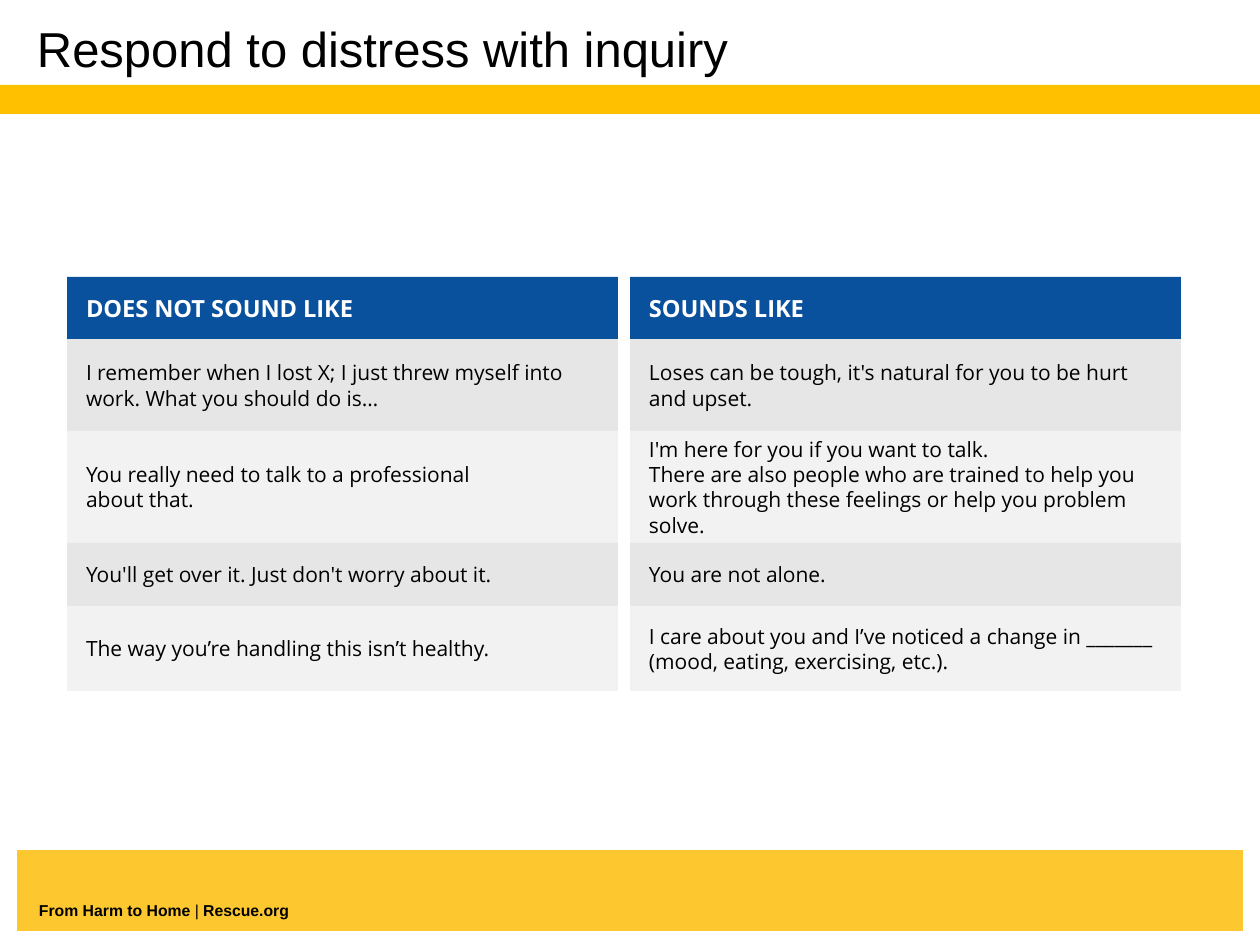
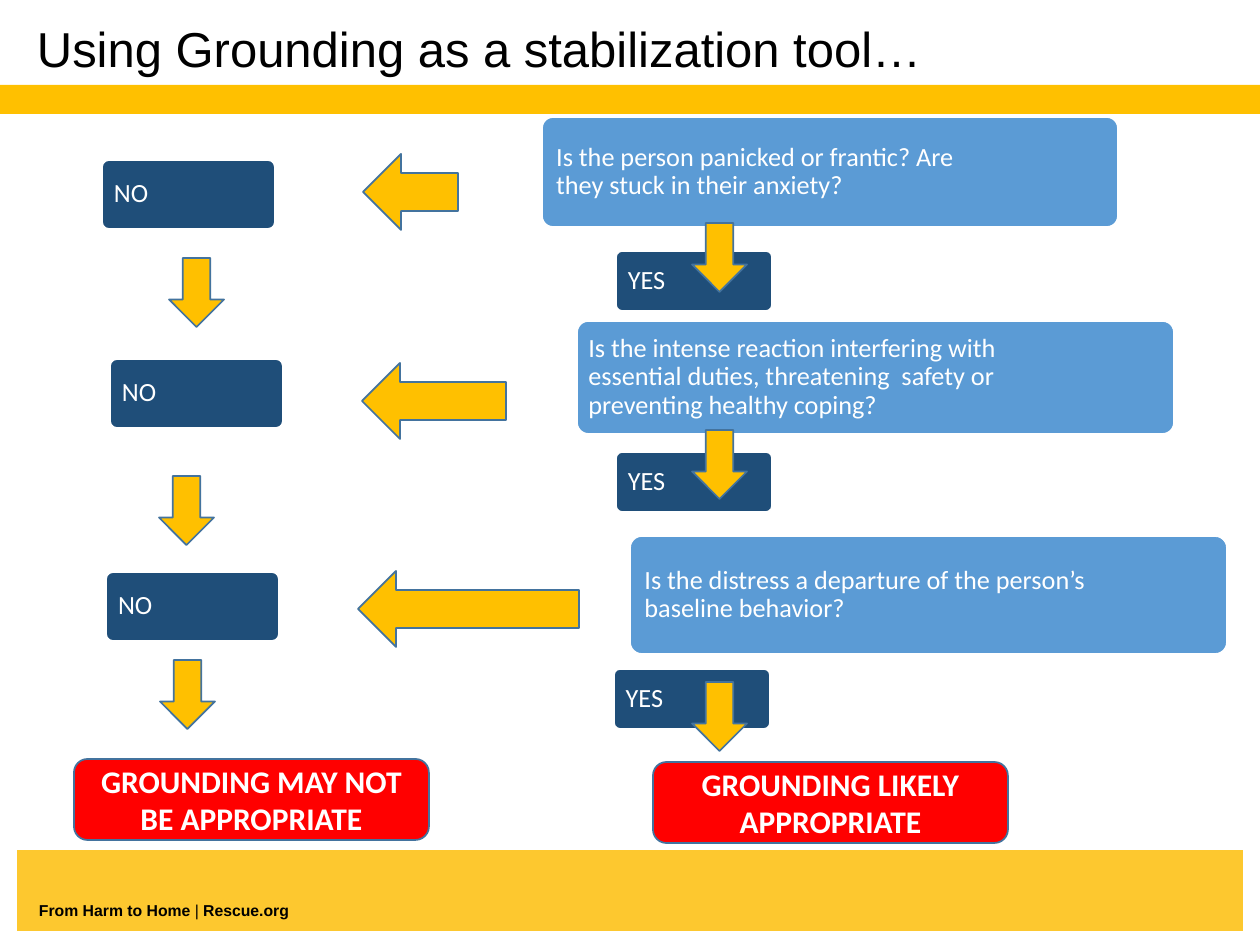
from pptx import Presentation
from pptx import util as u
from pptx.dml.color import RGBColor
from pptx.enum import shapes, text

EMU_PER_PX = 914400 / 126
COLORS = {
    "black": "000000", "white": "FFFFFF", "band": "FFC000", "footer": "FDC82F",
    "header": "0A519D", "row_dark": "E7E6E6", "row_light": "F2F2F2",
    "answer": "1F4E79", "question": "5B9BD5", "outcome": "FF0000", "outline": "43739E",
}
COLUMN_WIDTH = 551
ROW_EDGES = [277, 339, 431, 543, 606, 691]
ROW_FILLS = ["header", "row_dark", "row_light", "row_dark", "row_light"]
COLUMNS = {
    67: ["DOES NOT SOUND LIKE",
         "I remember when I lost X; I just threw myself into work. What you should do is…",
         "You really need to talk to a professional \vabout that.",
         "You'll get over it. Just don't worry about it.",
         "The way you’re handling this isn’t healthy."],
    630: ["SOUNDS LIKE",
          "Loses can be tough, it's natural for you to be hurt and upset.",
          "I'm here for you if you want to talk.\nThere are also people who are trained "
          "to help you work through these feelings or help you problem solve.",
          "You are not alone.",
          "I care about you and I’ve noticed a change in _______ "
          "(mood, eating, exercising, etc.)."],
}
QUESTIONS = [
    ((542, 117, 576, 110), 11,
     "Is the person panicked or frantic? Are they stuck in their anxiety?"),
    ((577, 321, 597, 113), 8,
     "Is the intense reaction interfering with essential duties, threatening  safety or "
     "preventing healthy coping?"),
    ((630, 536, 597, 118), 11,
     "Is the distress a departure of the person’s baseline behavior?"),
]
NO_CORNERS = [(102, 160), (110, 359), (106, 572)]
YES_CORNERS = [(616, 251), (616, 452), (614, 669)]
LEFT_ARROWS = [(363, 154, 95), (362, 363, 144), (358, 571, 221)]
DOWN_ARROWS = [(692, 223), (692, 430), (692, 682), (169, 258), (159, 476), (160, 660)]
OUTCOMES = [((653, 762), "GROUNDING LIKELY APPROPRIATE"),
            ((74, 759), "GROUNDING MAY NOT BE APPROPRIATE")]


def px(length):
    return u.Emu(round(length * EMU_PER_PX))


def rgb(name):
    return RGBColor.from_string(COLORS[name])


def add_shape(slide, kind, box, fill, line=None):
    shape = slide.shapes.add_shape(kind, *map(px, box))
    shape.shadow.inherit = False
    shape.fill.solid()
    shape.fill.fore_color.rgb = rgb(fill)
    if line:
        shape.line.color.rgb = rgb(line)
        shape.line.width = u.Pt(1)
    else:
        shape.line.fill.background()
    return shape


def write(shape, wording, font, size, color, bold=False, margins=(13, 6, 13, 6),
          anchor=text.MSO_ANCHOR.MIDDLE, align=text.PP_ALIGN.LEFT, spacing=None):
    """Fill a shape with text; margins are left, top, right, bottom."""
    frame = shape.text_frame
    frame.text = wording
    frame.word_wrap = True
    frame.vertical_anchor = anchor
    (frame.margin_left, frame.margin_top,
     frame.margin_right, frame.margin_bottom) = map(px, margins)
    for paragraph in frame.paragraphs:
        paragraph.alignment = align
        paragraph.line_spacing = spacing
        for run in paragraph.runs:
            run.font.name = font
            run.font.size = u.Pt(size)
            run.font.bold = bold
            run.font.color.rgb = rgb(color)
    return frame


def add_footer(slide):
    add_shape(slide, shapes.MSO_SHAPE.RECTANGLE, (17, 850, 1226, 81), "footer")
    box = slide.shapes.add_textbox(*map(px, (39, 901, 410, 19)))
    frame = write(box, "From Harm to Home ", "Arial", 9, "black", True, (0, 0, 0, 0),
                  text.MSO_ANCHOR.BOTTOM)
    for part, bold in (("|", False), (" Rescue.org", True)):
        run = frame.paragraphs[0].add_run()
        run.text = part
        run.font.name = "Arial"
        run.font.size = u.Pt(9)
        run.font.bold = bold
        run.font.color.rgb = rgb("black")


def add_titled_slide(presentation, title):
    slide = presentation.slides.add_slide(presentation.slide_layouts[6])
    add_footer(slide)
    add_shape(slide, shapes.MSO_SHAPE.RECTANGLE, (0, 85, 1260, 29), "band")
    box = slide.shapes.add_textbox(*map(px, (24, 19, 1207, 64)))
    write(box, title, "Arial", 28, "black", anchor=text.MSO_ANCHOR.TOP, spacing=0.9)
    return slide


def add_column(slide, left, wordings):
    for row, wording in enumerate(wordings):
        top, bottom = ROW_EDGES[row:row + 2]
        cell = add_shape(slide, shapes.MSO_SHAPE.RECTANGLE,
                         (left, top, COLUMN_WIDTH, bottom - top), ROW_FILLS[row])
        if row == 0:
            write(cell, wording, "Open Sans", 13.5, "white", True, (19,) * 4)
        else:
            write(cell, wording, "Open Sans", 12, "black", margins=(19,) * 4)


def add_card(slide, box, fill, wording, left_margin=10):
    """Rounded box whose text keeps clear of its right fifth."""
    card = add_shape(slide, shapes.MSO_SHAPE.ROUNDED_RECTANGLE, box, fill, "white")
    card.adjustments[0] = 0.1
    write(card, wording, "Calibri", 15, "white",
          margins=(left_margin, 8, box[2] * 0.19, 8), spacing=0.9)


def add_arrow(slide, kind, box):
    add_shape(slide, kind, box, "band", "outline")


def add_outcome(slide, corner, wording):
    outcome = add_shape(slide, shapes.MSO_SHAPE.ROUNDED_RECTANGLE, (*corner, 355, 81),
                        "outcome", "outline")
    write(outcome, wording, "Calibri", 18, "white", True, align=text.PP_ALIGN.CENTER)


def build_inquiry_slide(presentation):
    slide = add_titled_slide(presentation, "Respond to distress with inquiry")
    for left, wordings in COLUMNS.items():
        add_column(slide, left, wordings)


def build_grounding_slide(presentation):
    slide = add_titled_slide(presentation, "Using Grounding as a stabilization tool…")
    for left, top, width in LEFT_ARROWS:
        add_arrow(slide, shapes.MSO_SHAPE.LEFT_ARROW, (left, top, width, 76))
    for corner in NO_CORNERS:
        add_card(slide, (*corner, 173, 69), "answer", "NO")
    for box, left_margin, wording in QUESTIONS:
        add_card(slide, box, "question", wording, left_margin)
    for corner in YES_CORNERS:
        add_card(slide, (*corner, 156, 60), "answer", "YES")
    for corner in DOWN_ARROWS:
        add_arrow(slide, shapes.MSO_SHAPE.DOWN_ARROW, (*corner, 55, 69))
    for corner, wording in OUTCOMES:
        add_outcome(slide, corner, wording)


def main():
    presentation = Presentation()
    presentation.slide_width = px(1260)
    presentation.slide_height = px(945)
    build_inquiry_slide(presentation)
    build_grounding_slide(presentation)
    presentation.save("out.pptx")


if __name__ == "__main__":
    main()
